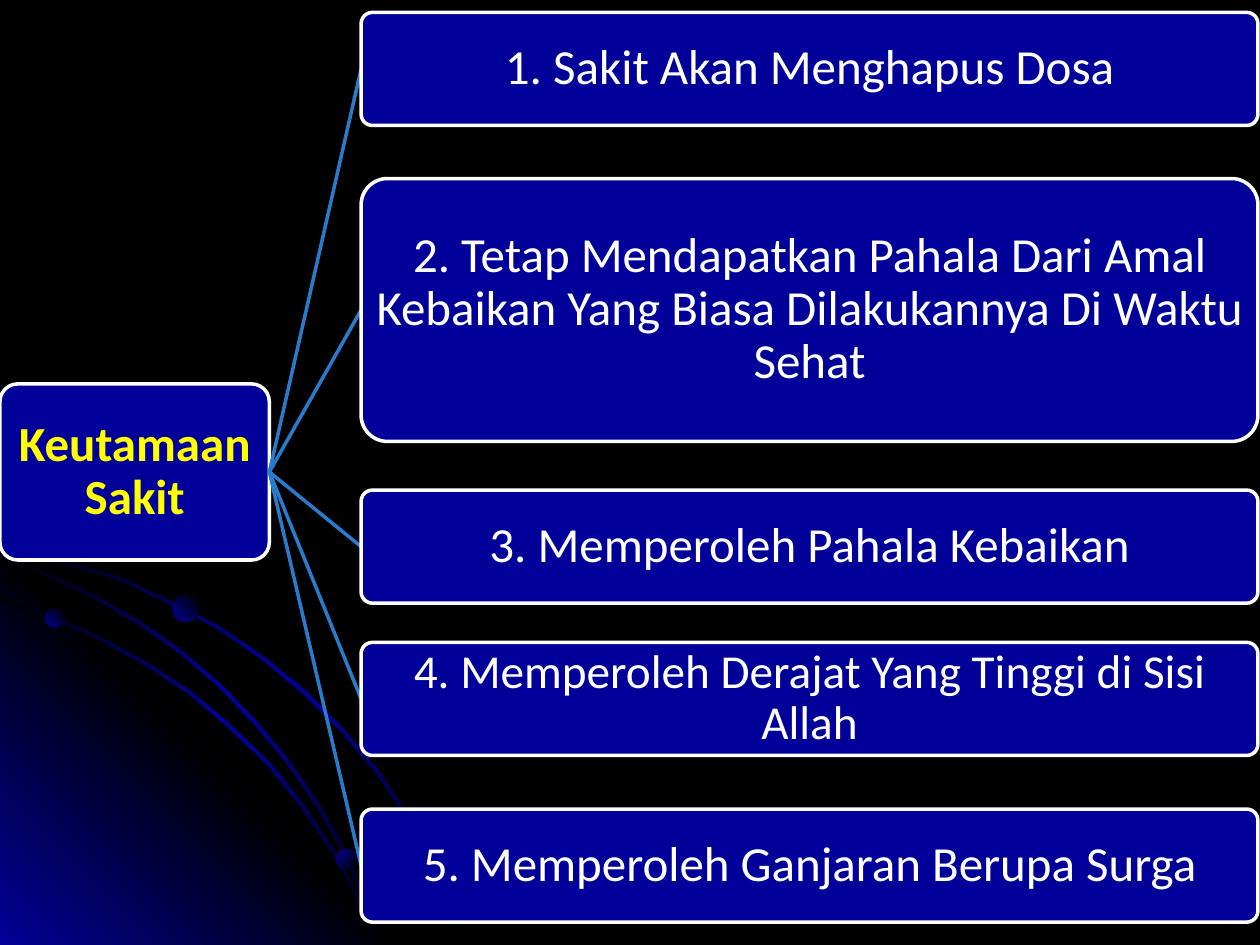
from copy import deepcopy

from lxml import etree
from pptx import Presentation
from pptx.dml.color import RGBColor
from pptx.enum.shapes import MSO_CONNECTOR, MSO_SHAPE
from pptx.enum.text import MSO_ANCHOR, PP_ALIGN
from pptx.oxml.ns import qn
from pptx.util import Cm, Pt

ROUNDED = MSO_SHAPE.ROUNDED_RECTANGLE
OVAL = MSO_SHAPE.OVAL
STRAIGHT = MSO_CONNECTOR.STRAIGHT
MIDDLE = MSO_ANCHOR.MIDDLE
CENTER = PP_ALIGN.CENTER

BLACK = RGBColor(0x00, 0x00, 0x00)
NAVY = RGBColor(0x01, 0x01, 0x99)
WHITE = RGBColor(0xFF, 0xFF, 0xFF)
YELLOW = RGBColor(0xFF, 0xFF, 0x00)
BLUE = RGBColor(0x29, 0x7B, 0xCC)

SLIDE_WIDTH, SLIDE_HEIGHT = 25.4, 19.05
ROOT_TEXT = "Keutamaan Sakit"
ROOT_BOX = (0, 7.74, 5.43, 3.55)
BRANCH_LEFT, BRANCH_WIDTH = 7.28, 18.08
BRANCHES = [
    ("1. Sakit Akan Menghapus Dosa", 0.25, 2.28, 28),
    ("2. Tetap Mendapatkan Pahala Dari Amal Kebaikan Yang Biasa "
     "Dilakukannya Di Waktu Sehat", 3.6, 5.3, 28),
    ("3. Memperoleh Pahala Kebaikan", 9.88, 2.28, 28),
    ("4. Memperoleh Derajat Yang Tinggi di Sisi Allah", 12.95, 2.28, 27),
    ("5. Memperoleh Ganjaran Berupa Surga", 16.31, 2.28, 28),
]

CORNER_GLOW = [(8.18, SLIDE_HEIGHT), (0, SLIDE_HEIGHT), (0, 10.85)]
OUTER_ARC = [
    (0, 11.05), (0.71, 11.2), (1.45, 11.35), (2.49, 11.66), (3.45, 12.12),
    (4.42, 12.62), (5.31, 13.23), (6.15, 13.92), (6.91, 14.68), (7.62, 15.52),
    (8.26, 16.46), (8.61, 17.09), (8.94, 17.73), (9.19, 18.36), (9.45, 19.03),
]
INNER_ARC = [
    (0, 12.07), (1.04, 12.4), (2.01, 12.83), (2.97, 13.36), (3.86, 13.94),
    (4.67, 14.63), (5.46, 15.39), (6.15, 16.26), (6.76, 17.17), (7.26, 18.08),
    (7.52, 18.54), (7.7, 19.03),
]
MIDDLE_ARC = [
    (0, 11.23), (0.99, 11.56), (1.93, 12.01), (2.82, 12.52), (3.66, 13.11),
    (4.45, 13.79), (5.18, 14.55), (5.82, 15.32), (6.45, 16.23), (6.83, 16.89),
    (7.16, 17.6), (7.47, 18.29), (7.7, 19.03),
]
ARC_THICKNESS = 0.05
DOTS = [(0.91, 12.27, 0.38, 45), (6.78, 17.12, 0.41, 315), (3.48, 12.01, 0.53, 45)]


def fill_gradient(shape, colors, angle):
    shape.shadow.inherit = False
    shape.line.fill.background()
    shape.fill.gradient()
    shape.fill.gradient_angle = angle
    stop_list = shape.fill._xPr.find(".//" + qn("a:gsLst"))
    while len(stop_list) < len(colors):
        stop_list.append(deepcopy(stop_list[0]))
    for index, (stop, color) in enumerate(zip(shape.fill.gradient_stops, colors)):
        stop.position = index / (len(colors) - 1)
        stop.color.rgb = color


def add_outline(slide, points, colors, angle):
    corners = [(Cm(x), Cm(y)) for x, y in points]
    builder = slide.shapes.build_freeform(*corners[0])
    builder.add_line_segments(corners[1:], close=True)
    fill_gradient(builder.convert_to_shape(), colors, angle)


def add_arc(slide, edge):
    end = edge[-1][1]
    lower_edge = [(max(x - ARC_THICKNESS, 0), min(y + ARC_THICKNESS, end))
                  for x, y in reversed(edge)]
    add_outline(slide, edge + lower_edge, [BLACK, NAVY, BLACK], 315)


def add_box(slide, box, text, size, color, bold=False):
    shape = slide.shapes.add_shape(ROUNDED, *map(Cm, box))
    shape.adjustments[0] = 0.1
    shape.shadow.inherit = False
    shape.fill.solid()
    shape.fill.fore_color.rgb = NAVY
    shape.line.color.rgb = WHITE
    shape.line.width = Pt(2)
    frame = shape.text_frame
    frame.word_wrap = True
    frame.vertical_anchor = MIDDLE
    frame.margin_left = frame.margin_right = Cm(0.05)
    frame.margin_top = frame.margin_bottom = Cm(0.05)
    paragraph = frame.paragraphs[0]
    paragraph.alignment = CENTER
    paragraph.line_spacing = 0.9
    run = paragraph.add_run()
    run.text = text
    run.font.name = "Calibri"
    run.font.size = Pt(size)
    run.font.bold = bold
    run.font.color.rgb = color


def add_link(slide, start, end):
    connector = slide.shapes.add_connector(STRAIGHT, *map(Cm, start + end))
    connector.line.color.rgb = BLUE
    connector.line.width = Pt(2)
    etree.SubElement(connector._element.spPr, qn("a:effectLst"))


def main():
    presentation = Presentation()
    presentation.slide_width = Cm(SLIDE_WIDTH)
    presentation.slide_height = Cm(SLIDE_HEIGHT)
    slide = presentation.slides.add_slide(presentation.slide_layouts[6])
    slide.background.fill.solid()
    slide.background.fill.fore_color.rgb = BLACK

    add_arc(slide, OUTER_ARC)
    add_outline(slide, CORNER_GLOW, [NAVY, BLACK, NAVY], 45)
    add_arc(slide, INNER_ARC)
    add_arc(slide, MIDDLE_ARC)
    for left, top, size, angle in DOTS:
        dot = slide.shapes.add_shape(OVAL, Cm(left), Cm(top), Cm(size), Cm(size))
        fill_gradient(dot, [NAVY, BLACK], angle)

    add_box(slide, ROOT_BOX, ROOT_TEXT, 28, YELLOW, bold=True)
    left, top, width, height = ROOT_BOX
    hub = (left + width, top + height / 2)
    for text, top, height, size in BRANCHES:
        add_link(slide, hub, (BRANCH_LEFT, top + height / 2))
        add_box(slide, (BRANCH_LEFT, top, BRANCH_WIDTH, height), text, size, WHITE)

    presentation.save("out.pptx")


if __name__ == "__main__":
    main()
